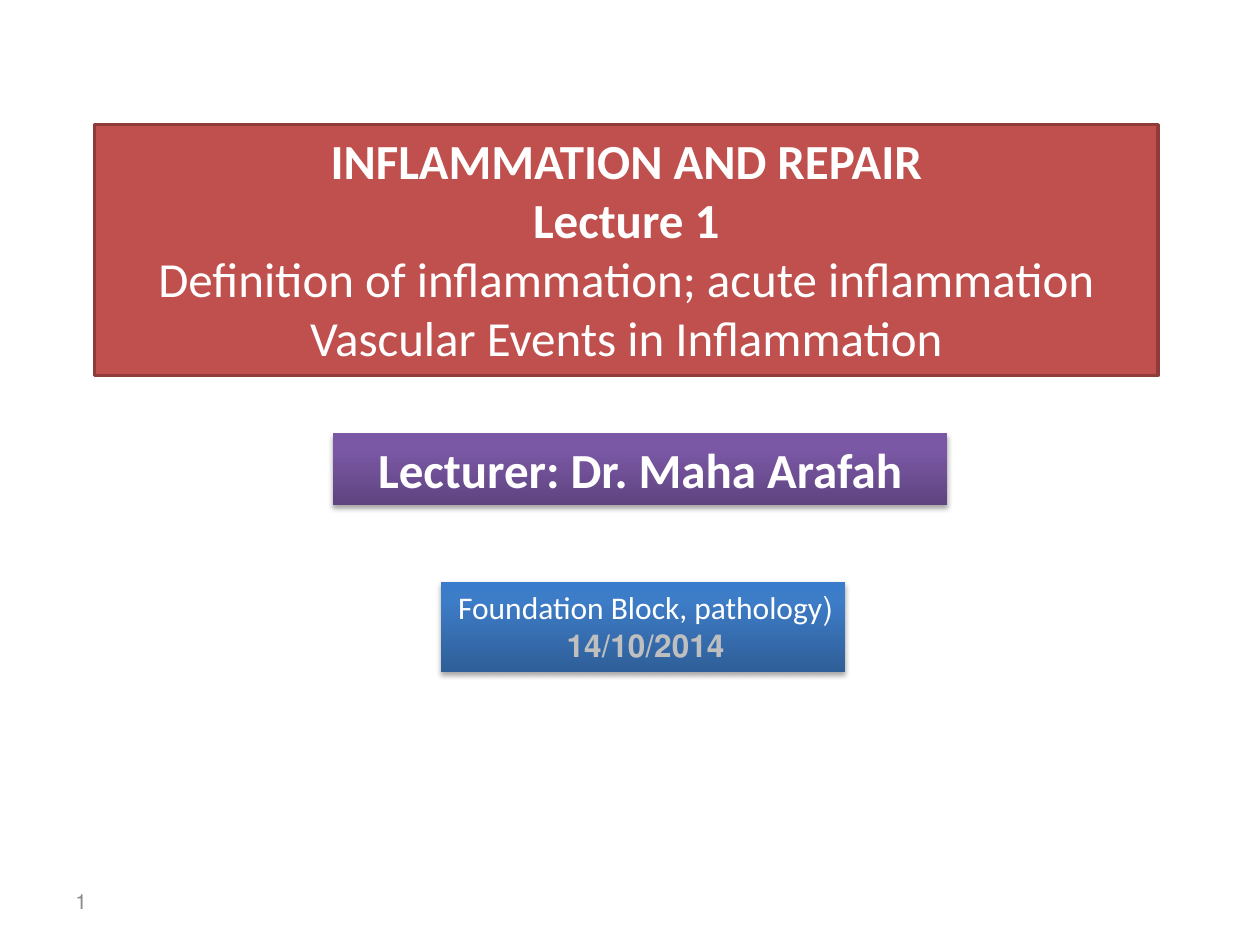
"""Build the title slide of a lecture on inflammation and repair."""
from lxml import etree
from pptx import Presentation
from pptx.dml.color import RGBColor
from pptx.enum.shapes import MSO_SHAPE
from pptx.enum.text import MSO_ANCHOR, MSO_AUTO_SIZE, PP_ALIGN
from pptx.oxml import parse_xml
from pptx.util import Inches, Pt

RECT = MSO_SHAPE.RECTANGLE
MIDDLE = MSO_ANCHOR.MIDDLE
GROW = MSO_AUTO_SIZE.SHAPE_TO_FIT_TEXT
LEFT, MID, RIGHT = PP_ALIGN.LEFT, PP_ALIGN.CENTER, PP_ALIGN.RIGHT
NS = "http://schemas.openxmlformats.org/drawingml/2006/main"
WHITE = "FFFFFF"


def tint(code):
    return RGBColor.from_string(code)


def write(frame, lines, size):
    for i, (text, side, bold, code) in enumerate(lines):
        para = frame.add_paragraph() if i else frame.paragraphs[0]
        para.alignment = side
        para._p.get_or_add_pPr().set("rtl", "1")
        run = para.add_run()
        run.text = text
        font = run.font
        font.name, font.size, font.bold = "Calibri", Pt(size), bold
        font.color.rgb = tint(code)


deck = Presentation()
deck.slide_width, deck.slide_height = Inches(10), Inches(7.5)
wide, high = deck.slide_width / 100, deck.slide_height / 100
slide = deck.slides.add_slide(deck.slide_layouts[6])

page = slide.shapes.add_textbox(
    int(5 * wide), int(92.67 * high), int(23.33 * wide), int(5.33 * high))
page.text_frame.word_wrap = True
page.text_frame.vertical_anchor = MIDDLE
write(page.text_frame, [("1", LEFT, False, "8C8C8C")], 12)

title = [
    ("INFLAMMATION AND REPAIR", MID, True, WHITE),
    ("Lecture 1", MID, True, WHITE),
    ("Definition of inflammation; acute inflammation", MID, False, WHITE),
    ("Vascular Events in Inflammation", MID, False, WHITE),
]
name = [("Lecturer: Dr. Maha Arafah", MID, True, WHITE)]
course = [
    ("(Foundation Block, pathology", RIGHT, False, WHITE),
    ("14/10/2014", MID, True, "BFBFBF"),
]
boxes = [
    ((26.4, 45.87, 48.8, 7.6), ["5F4480", "7B58A6", "7C57A8"], True, 28, name),
    ((7.5, 13.2, 84.4, 26.53), ["C0504D"], False, 28, title),
    ((35, 61.6, 32.1, 9.47), ["2F5F99", "3D7CC7", "3A7CCB"], False, 18, course),
]

for (x, y, w, h), fills, wrap, size, lines in boxes:
    box = slide.shapes.add_shape(
        RECT, int(x * wide), int(y * high), int(w * wide), int(h * high))
    box.shadow.inherit = False
    if len(fills) == 1:
        box.fill.solid()
        box.fill.fore_color.rgb = tint(fills[0])
        box.line.color.rgb = tint("8E3B39")
        box.line.width = Pt(2)
    else:
        box.line.fill.background()
        stops = "".join(
            f'<a:gs pos="{pos}000"><a:srgbClr val="{code}"/></a:gs>'
            for pos, code in zip((0, 80, 100), fills))
        box._element.spPr.insert(2, parse_xml(
            f'<a:gradFill xmlns:a="{NS}" rotWithShape="1"><a:gsLst>{stops}'
            '</a:gsLst><a:lin ang="16200000" scaled="0"/></a:gradFill>'))
        glow = box._element.spPr.find(f"{{{NS}}}effectLst")
        shade = etree.SubElement(
            glow, f"{{{NS}}}outerShdw", blurRad=str(Pt(3.1)),
            dist=str(Pt(1.8)), dir="5400000", rotWithShape="0")
        black = etree.SubElement(shade, f"{{{NS}}}srgbClr", val="000000")
        etree.SubElement(black, f"{{{NS}}}alpha", val="35000")
    frame = box.text_frame
    frame.word_wrap = wrap
    frame.auto_size = GROW
    frame.vertical_anchor = MSO_ANCHOR.TOP
    write(frame, lines, size)

deck.save("out.pptx")
